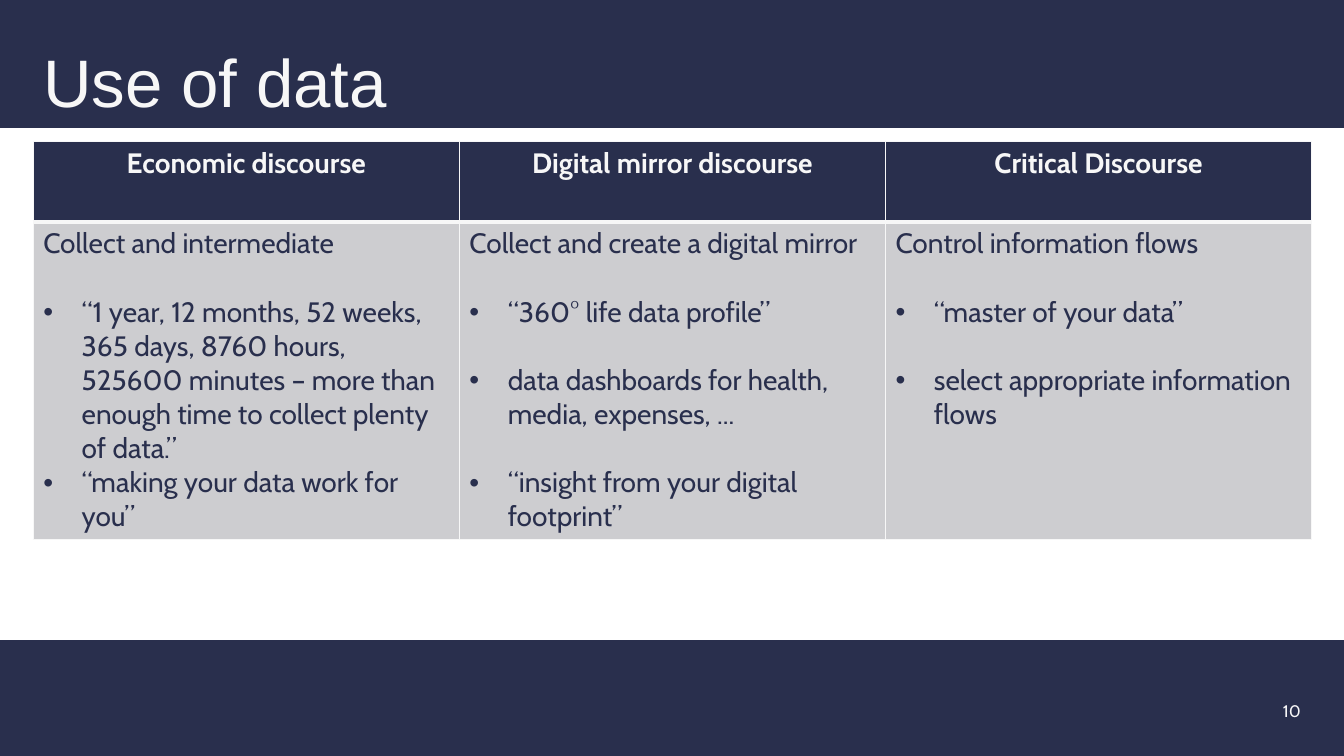
"""Build the "Use of data" slide: a table comparing three discourses."""
from lxml import etree
from pptx import Presentation
from pptx.dml.color import RGBColor
from pptx.enum.shapes import MSO_SHAPE
from pptx.enum.text import MSO_ANCHOR, MSO_AUTO_SIZE, PP_ALIGN
from pptx.oxml import parse_xml
from pptx.oxml.ns import nsdecls, qn
from pptx.util import Inches, Pt

NAVY = RGBColor(0x29, 0x2F, 0x4D)
OFF_WHITE = RGBColor(0xF7, 0xF7, 0xF7)
GREY = RGBColor(0xCD, 0xCD, 0xD0)
RECTANGLE = MSO_SHAPE.RECTANGLE
BOTTOM = MSO_ANCHOR.BOTTOM
NO_AUTOFIT = MSO_AUTO_SIZE.NONE
LEFT, CENTER, RIGHT = PP_ALIGN.LEFT, PP_ALIGN.CENTER, PP_ALIGN.RIGHT
LINE_GAP = Pt(24.3)
BULLET_INDENT = Inches(0.38)

DISCOURSES = [
    ("Economic discourse", "Collect and intermediate", [
        "“1 year, 12 months, 52 weeks, 365 days, 8760 hours, 525600 minutes "
        "– more than enough time to collect plenty of data.”",
        "“making your data work for you”"], Pt(0)),
    ("Digital mirror discourse", "Collect and create a digital mirror", [
        "“360° life data profile”",
        "data dashboards for health, media, expenses, ...",
        "“insight from your digital footprint”"], LINE_GAP),
    ("Critical Discourse", "Control information flows", [
        "“master of your data”",
        "select appropriate information flows"], LINE_GAP),
]


def format_paragraph(paragraph, font_name, size, color, alignment=LEFT, bold=False):
    paragraph.alignment = alignment
    for run in paragraph.runs:
        run.font.name = font_name
        run.font.size = Pt(size)
        run.font.color.rgb = color
        run.font.bold = bold


def style_cell(cell, fill_color, border_widths):
    properties = cell._tc.get_or_add_tcPr()
    for position, (side, width) in enumerate(zip("LRTB", border_widths)):
        properties.insert(position, parse_xml(
            f'<a:ln{side} {nsdecls("a")} w="{Pt(width)}"><a:solidFill>'
            f'<a:srgbClr val="{OFF_WHITE}"/></a:solidFill></a:ln{side}>'))
    cell.fill.solid()
    cell.fill.fore_color.rgb = fill_color


presentation = Presentation()
presentation.slide_width = Inches(13.33)
presentation.slide_height = Inches(7.5)
slide = presentation.slides.add_slide(presentation.slide_layouts[5])

for top, height in ((6.35, 1.15), (0, 1.27)):
    band = slide.shapes.add_shape(
        RECTANGLE, 0, Inches(top), presentation.slide_width, Inches(height))
    band.shadow.inherit = False
    band.fill.solid()
    band.fill.fore_color.rgb = NAVY
    band.line.fill.background()

title = slide.shapes.title
title.element.getparent().append(title.element)
title.left, title.top = Inches(0.33), Inches(0.19)
title.width, title.height = Inches(12.09), Inches(1.07)
title.text_frame.text = "Use of data"
title.text_frame.vertical_anchor = BOTTOM
title.text_frame.auto_size = NO_AUTOFIT
title.text_frame.paragraphs[0].line_spacing = 0.9
format_paragraph(title.text_frame.paragraphs[0], "Arial", 48, OFF_WHITE)

page_number = slide.shapes.add_textbox(
    Inches(12.3), Inches(6.78), Inches(0.7), Inches(0.42))
page_number.text_frame.word_wrap = True
page_number.text_frame.vertical_anchor = BOTTOM
page_number.text_frame.text = "10"
format_paragraph(page_number.text_frame.paragraphs[0], "Cabin", 12, OFF_WHITE, RIGHT)

table = slide.shapes.add_table(
    2, len(DISCOURSES), Inches(0.33), Inches(1.4), Inches(12.68), Inches(3.95)).table
table.rows[0].height = Inches(0.8)
table.rows[1].height = Inches(3.15)

for column, (heading, summary, points, point_gap) in enumerate(DISCOURSES):
    header = table.cell(0, column)
    style_cell(header, NAVY, (1, 1, 1, 3))
    header.text_frame.text = heading
    format_paragraph(header.text_frame.paragraphs[0], "Cabin", 20, OFF_WHITE, CENTER, True)

    body = table.cell(1, column)
    style_cell(body, GREY, (1, 1, 3, 1))
    body.text_frame.text = summary
    format_paragraph(body.text_frame.paragraphs[0], "Cabin", 20, NAVY)
    for index, point in enumerate(points):
        paragraph = body.text_frame.add_paragraph()
        paragraph.text = point
        properties = paragraph._p.get_or_add_pPr()
        properties.set("marL", str(BULLET_INDENT))
        properties.set("indent", str(-BULLET_INDENT))
        etree.SubElement(properties, qn("a:buFont")).set("typeface", "Arial")
        etree.SubElement(properties, qn("a:buChar")).set("char", "•")
        paragraph.space_before = point_gap if index else LINE_GAP
        format_paragraph(paragraph, "Cabin", 20, NAVY)

presentation.save("out.pptx")
